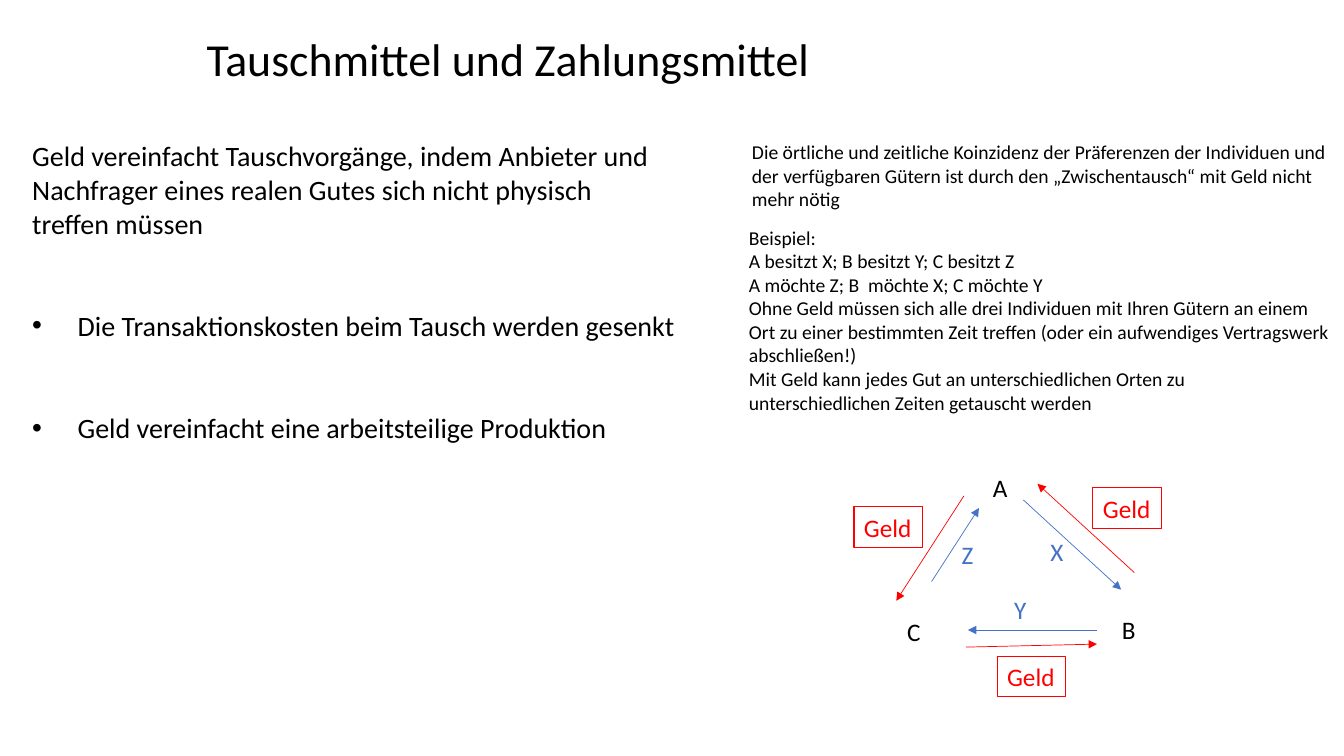
from lxml import etree
from pptx import Presentation, util as u
from pptx.dml.color import RGBColor
from pptx.enum import shapes, text
from pptx.oxml.ns import qn

BLACK, BLUE, RED = "000000", "4472C4", "FF0000"
CELL = u.Inches(0.1)  # square grid: 133.3 columns by 75 rows


def color(hex_code):
    return RGBColor.from_string(hex_code)


def write(shape, lines, size, hex_code=BLACK, wrap=True):
    frame = shape.text_frame
    frame.word_wrap = wrap
    frame.auto_size = text.MSO_AUTO_SIZE.SHAPE_TO_FIT_TEXT
    frame.vertical_anchor = text.MSO_ANCHOR.TOP
    frame.text = "\n".join(lines)
    for paragraph in frame.paragraphs:
        paragraph.alignment = text.PP_ALIGN.LEFT
        paragraph.font.name = "Calibri"
        paragraph.font.size = u.Pt(size)
        paragraph.font.color.rgb = color(hex_code)
    return frame


deck = Presentation()
deck.slide_width, deck.slide_height = u.Inches(13.33), u.Inches(7.5)
slide = deck.slides.add_slide(deck.slide_layouts[6])
add = slide.shapes

# Title
title = add.add_textbox(19.5 * CELL, 2.6 * CELL, 62.2 * CELL, 6.5 * CELL)
write(title, ["Tauschmittel und Zahlungsmittel"], 32.7, wrap=False)

# Main statement with its two consequences
statement = [
    "Geld vereinfacht Tauschvorgänge, indem Anbieter und",
    "Nachfrager eines realen Gutes sich nicht physisch",
    "treffen müssen",
]
consequences = [
    "Die Transaktionskosten beim Tausch werden gesenkt",
    "Geld vereinfacht eine arbeitsteilige Produktion",
]
main = add.add_textbox(2.3 * CELL, 13.3 * CELL, 65.7 * CELL, 32 * CELL)
main_frame = write(main, statement + consequences, 20)
main_frame.margin_left = main_frame.margin_right = u.Inches(0.09)
for paragraph in main_frame.paragraphs[len(statement):]:
    paragraph.space_before = u.Pt(49)
    properties = paragraph._p.get_or_add_pPr()
    properties.set("marL", str(u.Inches(0.45)))
    properties.set("indent", str(-u.Inches(0.45)))
    bullet_font = etree.Element(qn("a:buFont"), typeface="Arial")
    bullet = etree.Element(qn("a:buChar"), char="•")
    position = list(properties).index(properties.find(qn("a:defRPr")))
    properties.insert(position, bullet_font)
    properties.insert(position + 1, bullet)

# Explanation and example
explanation = add.add_textbox(73.6 * CELL, 13.4 * CELL, 59.7 * CELL, 8.1 * CELL)
write(explanation, [
    "Die örtliche und zeitliche Koinzidenz der Präferenzen der Individuen und "
    "der verfügbaren Gütern ist durch den „Zwischentausch“ mit Geld nicht mehr nötig",
], 14)
example = add.add_textbox(73.3 * CELL, 21.9 * CELL, 59.7 * CELL, 19.9 * CELL)
write(example, [
    "Beispiel:",
    "A besitzt X; B besitzt Y; C besitzt Z",
    "A möchte Z; B  möchte X; C möchte Y",
    "Ohne Geld müssen sich alle drei Individuen mit Ihren Gütern an einem Ort zu "
    "einer bestimmten Zeit treffen (oder ein aufwendiges Vertragswerk abschließen!)",
    "Mit Geld kann jedes Gut an unterschiedlichen Orten zu "
    "unterschiedlichen Zeiten getauscht werden",
], 14)

# Flows of goods (blue) and of money (red)
flows = [
    (101.5, 49.6, 111.2, 58.5, BLUE),
    (108.8, 62.5, 96, 62.5, BLUE),
    (92.4, 57.7, 97.1, 50.4, BLUE),
    (112.5, 56.8, 102.9, 48, RED),
    (95.6, 49.2, 88.9, 59.6, RED),
    (95.8, 64.2, 108.8, 63.9, RED),
]
for x1, y1, x2, y2, hue in flows:
    flow = add.add_connector(
        shapes.MSO_CONNECTOR.STRAIGHT, *(int(v * CELL) for v in (x1, y1, x2, y2)))
    flow.line.color.rgb = color(hue)
    flow.line.width = u.Pt(0.5)
    etree.SubElement(flow.line._get_or_add_ln(), qn("a:tailEnd"), type="triangle")
    etree.SubElement(flow._element.spPr, qn("a:effectLst"))

# Individuals (black) and their goods (blue)
letters = [
    ("A", 97.5, 46.4, BLACK), ("B", 110.3, 60.5, BLACK), ("C", 89, 60.7, BLACK),
    ("X", 103.2, 52.7, BLUE), ("Y", 99.6, 58.5, BLUE), ("Z", 94.4, 53, BLUE),
]
for letter, left, top, hue in letters:
    label = add.add_textbox(int(left * CELL), int(top * CELL), int(3.4 * CELL), 4 * CELL)
    write(label, [letter], 18, hue, wrap=False)

# Money boxes
for left, top in [(108.4, 48.4), (84.7, 50.3), (98.9, 65.1)]:
    money = add.add_shape(
        shapes.MSO_SHAPE.RECTANGLE,
        int(left * CELL), int(top * CELL), int(6.8 * CELL), 4 * CELL)
    money.shadow.inherit = False
    money.fill.background()
    money.line.color.rgb = color(RED)
    money.line.width = u.Pt(0.75)
    write(money, ["Geld"], 18, RED, wrap=False)

deck.save("out.pptx")
